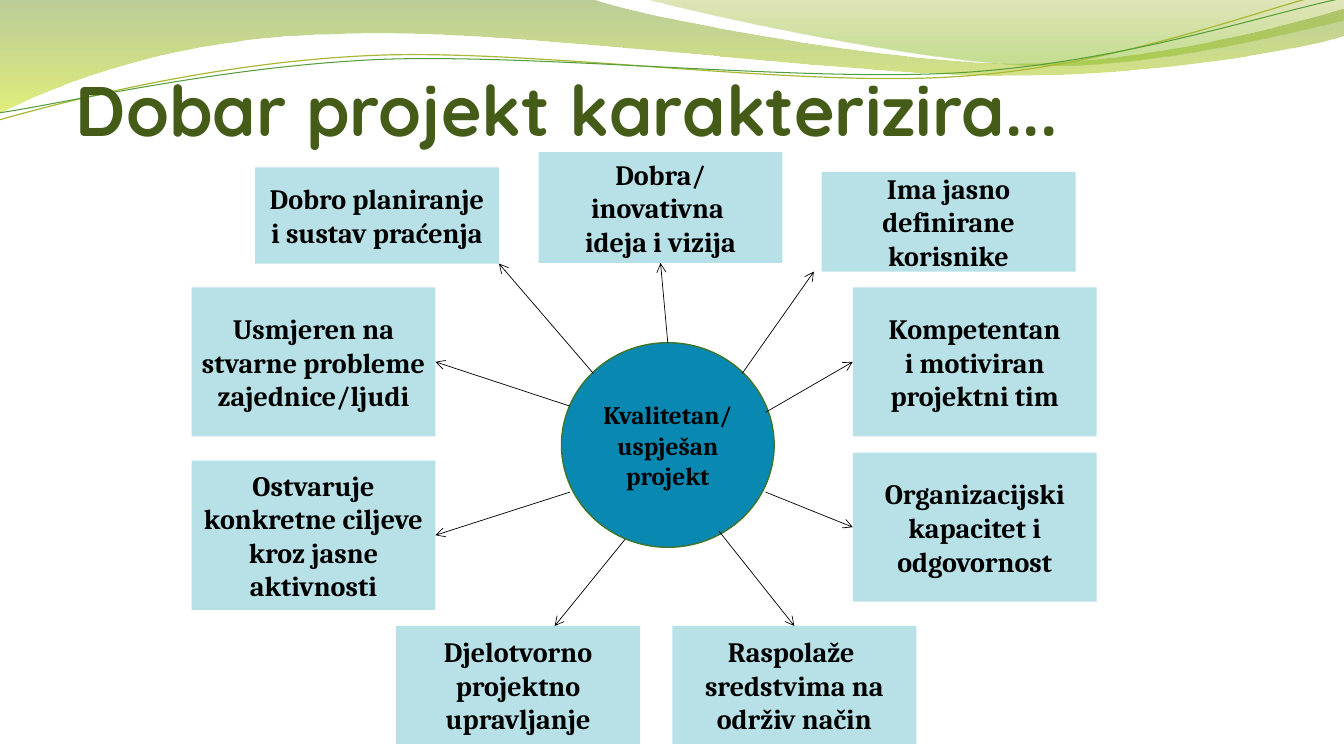
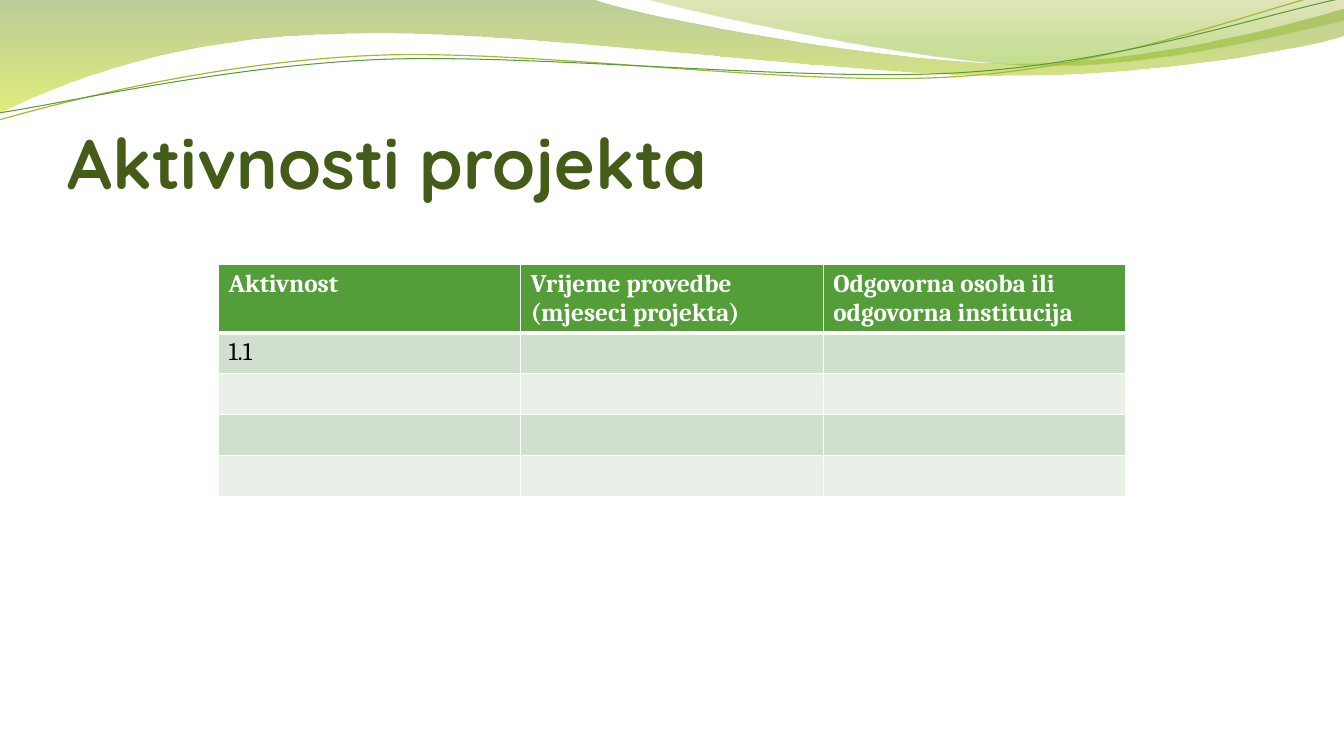
from dataclasses import dataclass

from lxml.etree import SubElement
from pptx import Presentation
from pptx.dml.color import RGBColor
from pptx.enum.shapes import MSO_CONNECTOR as Connector, MSO_SHAPE as Preset
from pptx.enum.text import MSO_ANCHOR as Anchor, MSO_AUTO_SIZE as AutoSize, PP_ALIGN as Align
from pptx.oxml.ns import qn
from pptx.util import Inches, Pt


@dataclass(frozen=True)
class Theme:
    """Colours, fonts and type sizes of the whole presentation."""
    title_font: str = "Quicksand"
    body_font: str = "Cambria"
    title_size: float = 50
    card_size: float = 20
    small_size: float = 18
    title: str = "455C19"
    ink: str = "000000"
    paper: str = "FFFFFF"
    card: str = "B7E1E7"
    hub: str = "0989B1"
    hub_edge: str = "3E752A"
    header: str = "549E39"
    bands: tuple = ("D1DFCE", "E9F0E8")
    wave_gradient: tuple = ((0, "69921C", 45), (1, "CCE10F", 55))
    veil_gradient: tuple = ((0, "9BAA1A", 30), (0.8, "81BA16", 45))
    olive_line: str = "A9B733"


@dataclass(frozen=True)
class Box:
    """A region measured in grid columns and rows of a tenth of an inch."""
    left: float
    top: float
    width: float
    height: float

    def inner(self, column, row, columns, rows):
        """Return a region placed relative to this one."""
        return Box(self.left + column, self.top + row, columns, rows)

    def point(self, across, down):
        """Return the position at the given shares of this region."""
        return grid(self.left + across * self.width), grid(self.top + down * self.height)

    def frame(self):
        """Return left, top, width and height as lengths."""
        return [grid(value) for value in (self.left, self.top, self.width, self.height)]


THEME = Theme()
SLIDE = Box(0, 0, 133.33, 75)
TITLE_SIZE = (120, 12.5)

WAVE = ((0, 0), [
    [(5.87, -0.01)],
    [(6.34, 0.17), (8.84, 0.63), (10.11, 0.63)],
    [(11.37, 0.63), (12.77, 0.26), (13.33, 0.09)],
    [(13.34, 0.36)],
    [(13.11, 0.44), (11.59, 0.76), (9.94, 0.75)],
    [(8.29, 0.75), (5.09, 0.28), (3.43, 0.34)],
    [(1.72, 0.36), (0.61, 0.83), (-0.02, 1.13)],
    [(0, 0)],
])
VEIL = ((6.38, -0.01), [
    [(6.79, 0.11), (9.09, 0.62), (10.25, 0.65)],
    [(11.4, 0.69), (12.82, 0.32), (13.33, 0.21)],
    [(13.33, 0)],
    [(6.38, -0.01)],
])
OLIVE_CURVE = ((-0.01, 1.19), [
    [(0.63, 1.01), (2.1, 0.62), (3.69, 0.55)],
    [(5.27, 0.48), (7.89, 0.87), (9.49, 0.76)],
    [(11.1, 0.66), (12.51, 0.08), (13.3, -0.1)],
])
GREEN_CURVE = ((-0.01, 1.12), [
    [(0.62, 1.03), (2.18, 0.66), (3.77, 0.59)],
    [(5.37, 0.53), (7.96, 0.82), (9.55, 0.72)],
    [(11.14, 0.62), (12.55, 0.14), (13.33, -0.02)],
])

HUB = (36.7, 18.9, 21.1, 20.3)
CARDS = [
    ("Djelotvorno projektno\nupravljanje", (20.3, 47, 24.2, 11.7), (0.3, 0.96), (0.65, 0)),
    ("Dobro planiranje\ni sustav praćenja", (6.3, 1.5, 24.2, 9.55), (0.15, 0.15), (1, 1)),
    ("Kompetentan\ni motiviran\nprojektni tim", (65.6, 13.4, 24.2, 14.8), (0.96, 0.34), (0, 0.5)),
    ("Organizacijski\nkapacitet i odgovornost", (65.6, 29.8, 24.2, 14.8), (0.96, 0.73), (0, 0.5)),
    ("Usmjeren na stvarne probleme zajednice/ljudi", (0, 13.4, 24.2, 14.8), (0.04, 0.31), (1, 0.5)),
    ("Dobra/ inovativna \nideja i vizija", (34.43, 0, 24.2, 11), (0.5, 0), (0.5, 1)),
    ("Ostvaruje konkretne ciljeve kroz jasne aktivnosti", (0, 30.6, 24.2, 14.8), (0.04, 0.73), (1, 0.5)),
    ("Ima jasno definirane korisnike", (62.5, 1.95, 25.2, 9.9), (0.85, 0.15), (-0.03, 1)),
    ("Raspolaže  sredstvima na održiv način", (47.7, 47, 24.2, 11.7), (0.74, 0.92), (0.5, 0)),
]
ACTIVITIES = [
    ["Aktivnost", "Vrijeme provedbe\n(mjeseci projekta)", "Odgovorna osoba ili odgovorna institucija"],
    ["1.1", "", ""],
    ["", "", ""],
    ["", "", ""],
    ["", "", ""],
]


def grid(count):
    """Convert a number of grid steps to a length."""
    return Inches(count / 10)


def color(code):
    """Convert a hexadecimal code to a colour."""
    return RGBColor.from_string(code)


def write(frame, text, *, size, font=THEME.body_font, ink=THEME.ink, bold=True, align=Align.LEFT):
    """Write one formatted paragraph for each line of the text."""
    for number, line in enumerate(text.split("\n")):
        paragraph = frame.paragraphs[0] if number == 0 else frame.add_paragraph()
        paragraph.alignment = align
        run = paragraph.add_run()
        run.text = line
        run.font.name, run.font.size, run.font.bold = font, Pt(size), bold
        run.font.color.rgb = color(ink)


def bend(shape, segments):
    """Turn each run of three straight steps into one cubic curve."""
    steps = iter(list(shape.element.iter(qn("a:lnTo"))))
    for segment in segments:
        first, *others = [next(steps) for _ in segment]
        if others:
            curve = first.makeelement(qn("a:cubicBezTo"))
            first.addprevious(curve)
            for step in (first, *others):
                curve.append(step[0])
                step.getparent().remove(step)


def add_outline(slide, outline, *, gradient=None, line=None, width=1):
    """Draw a closed gradient area or an open coloured curve."""
    start, segments = outline
    builder = slide.shapes.build_freeform(*map(Inches, start))
    points = [(Inches(x), Inches(y)) for segment in segments for x, y in segment]
    builder.add_line_segments(points, close=False)
    shape = builder.convert_to_shape()
    bend(shape, segments)
    shape.shadow.inherit = False
    if gradient:
        SubElement(next(shape.element.iter(qn("a:path"))), qn("a:close"))
        shape.fill.gradient()
        shape.fill.gradient_angle = 270
        for stop, (position, code, _) in zip(shape.fill.gradient_stops, gradient):
            stop.position = position
            stop.color.rgb = color(code)
        for element, (_, _, opacity) in zip(list(shape.element.iter(qn("a:srgbClr"))), gradient):
            SubElement(element, qn("a:alpha"), val=str(opacity * 1000))
        shape.line.fill.background()
    else:
        shape.fill.background()
        shape.line.color.rgb = color(line)
        shape.line.width = Pt(width)
    return shape


def add_waves(slide):
    """Draw the top waves once and move them to the shared layout."""
    waves = [
        add_outline(slide, WAVE, gradient=THEME.wave_gradient),
        add_outline(slide, VEIL, gradient=THEME.veil_gradient),
        add_outline(slide, OLIVE_CURVE, line=THEME.olive_line, width=0.85),
        add_outline(slide, GREEN_CURVE, line=THEME.header, width=0.75),
    ]
    for position, wave in enumerate(waves, start=2):
        slide.slide_layout.shapes.element.insert(position, wave.element)


def add_title(slide, text, box):
    """Move and format the title placeholder."""
    title = slide.shapes.title
    title.left, title.top, title.width, title.height = box.frame()
    frame = title.text_frame
    frame.auto_size, frame.word_wrap, frame.vertical_anchor = AutoSize.NONE, True, Anchor.BOTTOM
    frame.margin_left = frame.margin_right = frame.margin_bottom = 0
    frame.margin_top = Inches(0.05)
    write(frame, text, size=THEME.title_size, font=THEME.title_font, ink=THEME.title)


def add_node(slide, preset, text, box, *, fill, size, edge=None):
    """Draw a filled shape with centred text."""
    shape = slide.shapes.add_shape(preset, *box.frame())
    shape.shadow.inherit = False
    shape.fill.solid()
    shape.fill.fore_color.rgb = color(fill)
    if edge:
        shape.line.color.rgb = color(edge)
        shape.line.width = Pt(1)
    else:
        shape.line.fill.background()
    shape.text_frame.word_wrap = True
    shape.text_frame.vertical_anchor = Anchor.MIDDLE
    write(shape.text_frame, text, size=size, align=Align.CENTER)


def add_arrow(slide, start, end):
    """Draw a thin line with an open arrowhead at its end."""
    arrow = slide.shapes.add_connector(Connector.STRAIGHT, *start, *end)
    arrow.line.color.rgb = color(THEME.ink)
    arrow.line.width = Pt(0.5)
    properties = arrow.element.spPr
    SubElement(properties.find(qn("a:ln")), qn("a:tailEnd"), type="arrow")
    SubElement(properties, qn("a:effectLst"))


def add_hub_diagram(slide, box):
    """Draw the central circle, its cards and the arrows between them."""
    hub = box.inner(*HUB)
    add_node(slide, Preset.OVAL, "Kvalitetan/\nuspješan\nprojekt", hub,
             fill=THEME.hub, size=THEME.small_size, edge=THEME.hub_edge)
    for text, place, _, _ in CARDS:
        add_node(slide, Preset.RECTANGLE, text, box.inner(*place), fill=THEME.card, size=THEME.card_size)
    for _, place, start, end in CARDS:
        add_arrow(slide, hub.point(*start), box.inner(*place).point(*end))


def set_borders(cell, widths):
    """Give a cell white borders of the given widths."""
    properties = cell._tc.get_or_add_tcPr()
    for position, (side, width) in enumerate(widths.items()):
        border = SubElement(properties, qn(f"a:ln{side}"), w=str(Pt(width)))
        SubElement(SubElement(border, qn("a:solidFill")), qn("a:srgbClr"), val=THEME.paper)
        properties.insert(position, border)


def add_activity_table(slide, box, header_height=6.7):
    """Draw the banded table of activities."""
    rows, columns = len(ACTIVITIES), len(ACTIVITIES[0])
    table = slide.shapes.add_table(rows, columns, *box.frame()).table
    for column in table.columns:
        column.width = grid(box.width / columns)
    for number, (row, texts) in enumerate(zip(table.rows, ACTIVITIES)):
        is_header = number == 0
        row.height = grid(header_height if is_header else (box.height - header_height) / (rows - 1))
        for cell, text in zip(row.cells, texts):
            cell.fill.solid()
            cell.fill.fore_color.rgb = color(THEME.header if is_header else THEME.bands[(number - 1) % 2])
            set_borders(cell, {"L": 1, "R": 1, "T": 3 if number == 1 else 1, "B": 3 if is_header else 1})
            if text:
                write(cell.text_frame, text, size=THEME.small_size, bold=is_header,
                      ink=THEME.paper if is_header else THEME.ink)


def main():
    """Build and save the presentation."""
    presentation = Presentation()
    presentation.slide_width, presentation.slide_height = grid(SLIDE.width), grid(SLIDE.height)
    layout = presentation.slide_layouts[5]

    quality = presentation.slides.add_slide(layout)
    add_waves(quality)
    add_title(quality, "Dobar projekt karakterizira...", SLIDE.inner(7.5, 2.4, *TITLE_SIZE))
    add_hub_diagram(quality, SLIDE.inner(19, 15.1, 89.8, 58.7))

    activities = presentation.slides.add_slide(layout)
    add_title(activities, "Aktivnosti projekta", SLIDE.inner(6.7, 7.7, *TITLE_SIZE))
    add_activity_table(activities, SLIDE.inner(21.67, 26.25, 90, 22.9))

    presentation.save("out.pptx")


if __name__ == "__main__":
    main()
